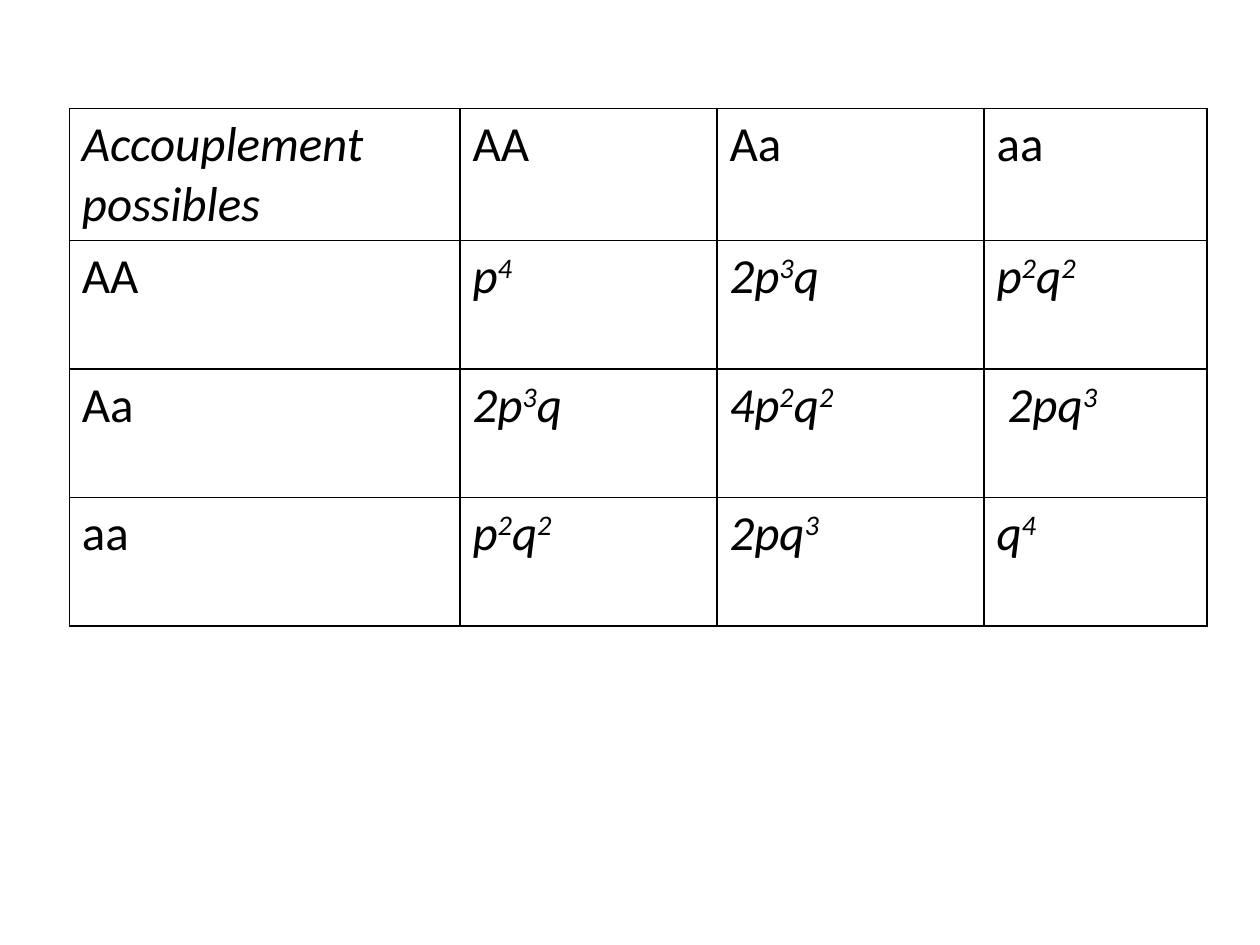
from lxml.etree import SubElement
from pptx import Presentation
from pptx.dml.color import RGBColor
from pptx.oxml.ns import qn
from pptx.util import Inches, Pt

COLORS = {"ink": "000000"}
COL_WIDTHS = [3.1, 2.04, 2.12, 1.77]
ROW_HEIGHT = 1.02
# "^" raises the one character after it
CROSSES = [
    ["Accouplement possibles", "AA", "Aa", "aa"],
    ["AA", "p^4", "2p^3q", "p^2q^2"],
    ["Aa", "2p^3q", "4p^2q^2", " 2pq^3"],
    ["aa", "p^2q^2", "2pq^3", "q^4"],
]


def add_run(p, text, size=28, italic=False, raised=False, color="ink"):
    r = p.add_run()
    r.text = text
    r.font.name = "Calibri"
    r.font.size = Pt(size)
    r.font.italic = italic
    r.font.color.rgb = RGBColor.from_string(COLORS[color])
    if raised:
        r.font._element.set("baseline", "30000")


def add_formula(p, text, **fmt):
    base, *powers = text.split("^")
    add_run(p, base, **fmt)
    for power in powers:
        add_run(p, power[0], raised=True, **fmt)
        if power[1:]:
            add_run(p, power[1:], **fmt)


def set_borders(cell, width=1, color="ink"):
    tc_pr = cell._tc.get_or_add_tcPr()
    for side in ("lnL", "lnR", "lnT", "lnB"):
        ln = SubElement(tc_pr, qn(f"a:{side}"), w=str(Pt(width)))
        fill = SubElement(ln, qn("a:solidFill"))
        SubElement(fill, qn("a:srgbClr"), val=COLORS[color])


def add_cross_table(s, left, top):
    rows, cols = len(CROSSES), len(COL_WIDTHS)
    frame = s.shapes.add_table(rows, cols, Inches(left), Inches(top),
                               Inches(sum(COL_WIDTHS)), Inches(rows * ROW_HEIGHT))
    table = frame.table
    table.first_row = table.horz_banding = False
    for column, width in zip(table.columns, COL_WIDTHS):
        column.width = Inches(width)
    for i, row in enumerate(CROSSES):
        table.rows[i].height = Inches(ROW_HEIGHT)
        for j, text in enumerate(row):
            cell = table.cell(i, j)
            set_borders(cell)
            cell.fill.background()
            is_genotype = (i == 0) != (j == 0)
            add_formula(cell.text_frame.paragraphs[0], text, italic=not is_genotype)


def main():
    prs = Presentation()
    prs.slide_width, prs.slide_height = Inches(10), Inches(7.5)
    s = prs.slides.add_slide(prs.slide_layouts[6])
    add_cross_table(s, 0.55, 0.86)
    prs.save("out.pptx")


if __name__ == "__main__":
    main()
